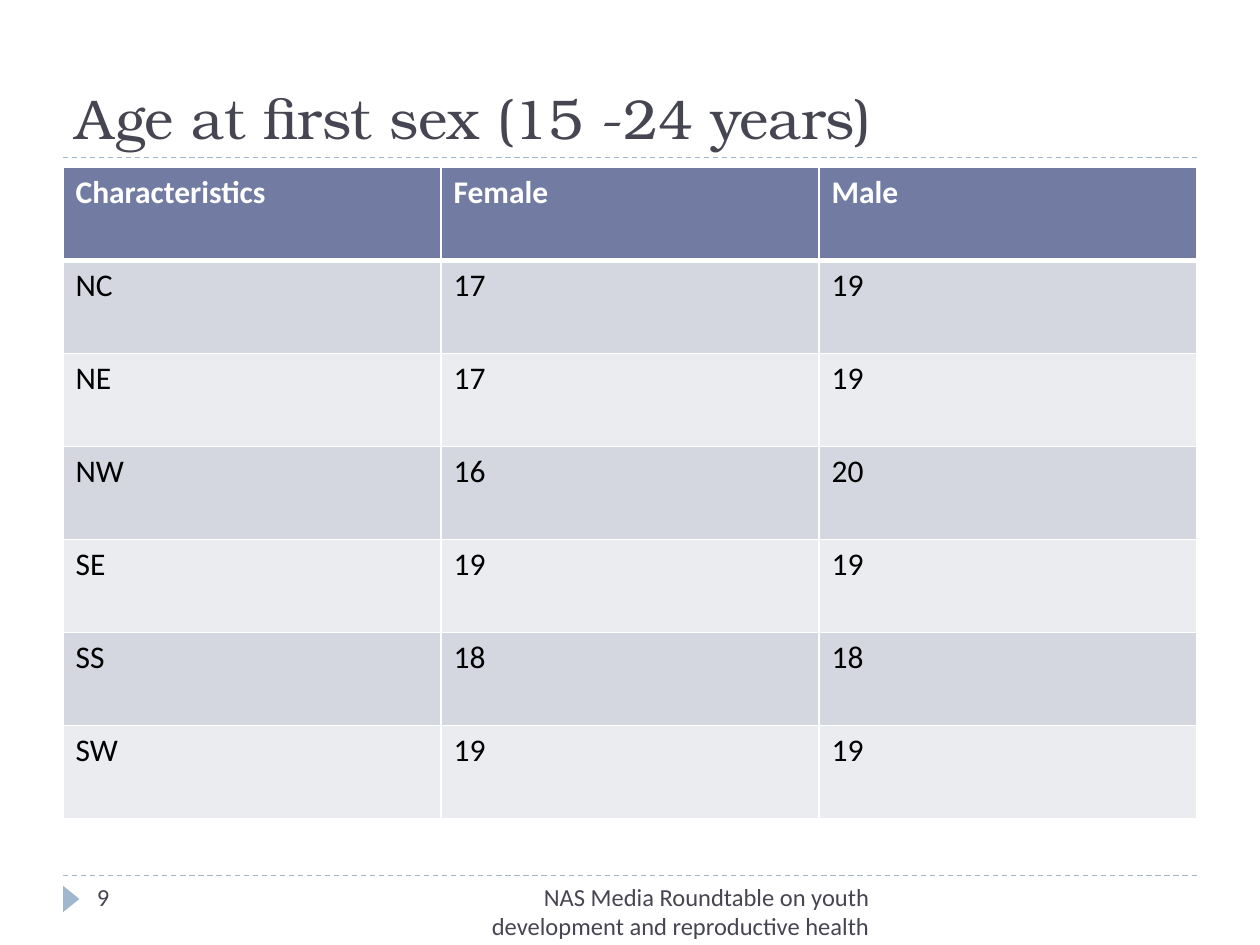
from dataclasses import dataclass
from typing import Any

import pptx
import pptx.dml.color
import pptx.enum.dml
import pptx.enum.shapes
import pptx.enum.text
import pptx.oxml.ns
import pptx.util
from lxml import etree

Inches = pptx.util.Inches
Pt = pptx.util.Pt
RGBColor = pptx.dml.color.RGBColor
Align = pptx.enum.text.PP_ALIGN
Anchor = pptx.enum.text.MSO_ANCHOR
qn = pptx.oxml.ns.qn

INK = RGBColor(0x46, 0x46, 0x53)
SKY = RGBColor(0x9F, 0xB8, 0xCD)
HEAD = RGBColor(0x72, 0x7C, 0xA3)
BANDS = (RGBColor(0xEB, 0xEC, 0xF0), RGBColor(0xD5, 0xD7, 0xE0))
WHITE = RGBColor(0xFF, 0xFF, 0xFF)
BLACK = RGBColor(0, 0, 0)

ROWS = (
    ("Characteristics", "Female", "Male"),
    ("NC", "17", "19"),
    ("NE", "17", "19"),
    ("NW", "16", "20"),
    ("SE", "19", "19"),
    ("SS", "18", "18"),
    ("SW", "19", "19"),
)


@dataclass
class Note:
    text: str
    left: float
    width: float
    align: Align


NOTES = (
    Note("NAS Media Roundtable on youth development and reproductive health",
         3.17, 3.83, Align.RIGHT),
    Note("9", 0.67, 2.17, Align.LEFT),
)
RULES = (6.95, 1.25)


def put(item: Any, form: dict[str, Any]) -> None:
    for name, value in form.items():
        setattr(item, name, value)


def style(para: Any, size: int, face: str, color: RGBColor, bold: bool = False) -> None:
    put(para.font, {"size": Pt(size), "name": face, "bold": bold})
    para.font.color.rgb = color


def draw_rule(slide: Any, top: float) -> None:
    rule = slide.shapes.add_connector(
        pptx.enum.shapes.MSO_CONNECTOR.STRAIGHT,
        Inches(0.5), Inches(top), Inches(9.5), Inches(top))
    put(rule.line, {"width": Pt(0.75), "dash_style": pptx.enum.dml.MSO_LINE.DASH})
    rule.line.color.rgb = SKY
    etree.SubElement(rule.element.spPr, qn("a:effectLst"))


def draw_mark(slide: Any) -> None:
    mark = slide.shapes.add_shape(
        pptx.enum.shapes.MSO_SHAPE.ISOSCELES_TRIANGLE,
        Inches(0.46), Inches(7.07), Inches(0.21), Inches(0.13))
    mark.rotation = 90
    mark.shadow.inherit = False
    mark.fill.solid()
    mark.fill.fore_color.rgb = SKY
    mark.line.fill.background()


def draw_title(slide: Any, text: str) -> None:
    title = slide.shapes.title
    put(title, {"left": Inches(0.5), "top": Inches(0.17),
                "width": Inches(9), "height": Inches(1.08)})
    put(title.text_frame, {"text": text, "vertical_anchor": Anchor.BOTTOM,
                           "word_wrap": True})
    para = title.text_frame.paragraphs[0]
    para.alignment = Align.LEFT
    style(para, 32, "TeX Gyre Bonum", INK)


def draw_note(slide: Any, note: Note) -> None:
    box = slide.shapes.add_textbox(
        Inches(note.left), Inches(6.95), Inches(note.width), Inches(0.4))
    put(box.text_frame, {"text": note.text, "word_wrap": True})
    para = box.text_frame.paragraphs[0]
    para.alignment = note.align
    style(para, 14, "Calibri", INK)


def add_edge(cell: Any, side: str, width: int) -> None:
    props = cell._tc.get_or_add_tcPr()
    edge = etree.SubElement(props, qn(f"a:ln{side}"), w=str(Pt(width)))
    fill = etree.SubElement(edge, qn("a:solidFill"))
    etree.SubElement(fill, qn("a:srgbClr"), val=str(WHITE))


def draw_cell(cell: Any, text: str, row: int) -> None:
    head = row == 0
    for side in "LRTB":
        thick = (head and side == "B") or (row == 1 and side == "T")
        add_edge(cell, side, 3 if thick else 1)
    cell.fill.solid()
    cell.fill.fore_color.rgb = HEAD if head else BANDS[row % 2]
    cell.text = text
    style(cell.text_frame.paragraphs[0], 18, "Calibri",
          WHITE if head else BLACK, head)


def draw_table(slide: Any) -> None:
    table = slide.shapes.add_table(
        len(ROWS), len(ROWS[0]), Inches(0.5), Inches(1.33),
        Inches(9), Inches(5.17)).table
    for row, texts in enumerate(ROWS):
        for col, text in enumerate(texts):
            draw_cell(table.cell(row, col), text, row)


def main() -> None:
    deck = pptx.Presentation()
    put(deck, {"slide_width": Inches(10), "slide_height": Inches(7.5)})
    slide = deck.slides.add_slide(deck.slide_layouts[5])
    for top in RULES:
        draw_rule(slide, top)
    draw_mark(slide)
    draw_title(slide, "Age at first sex (15 -24 years)")
    for note in NOTES:
        draw_note(slide, note)
    draw_table(slide)
    deck.save("out.pptx")


if __name__ == "__main__":
    main()
